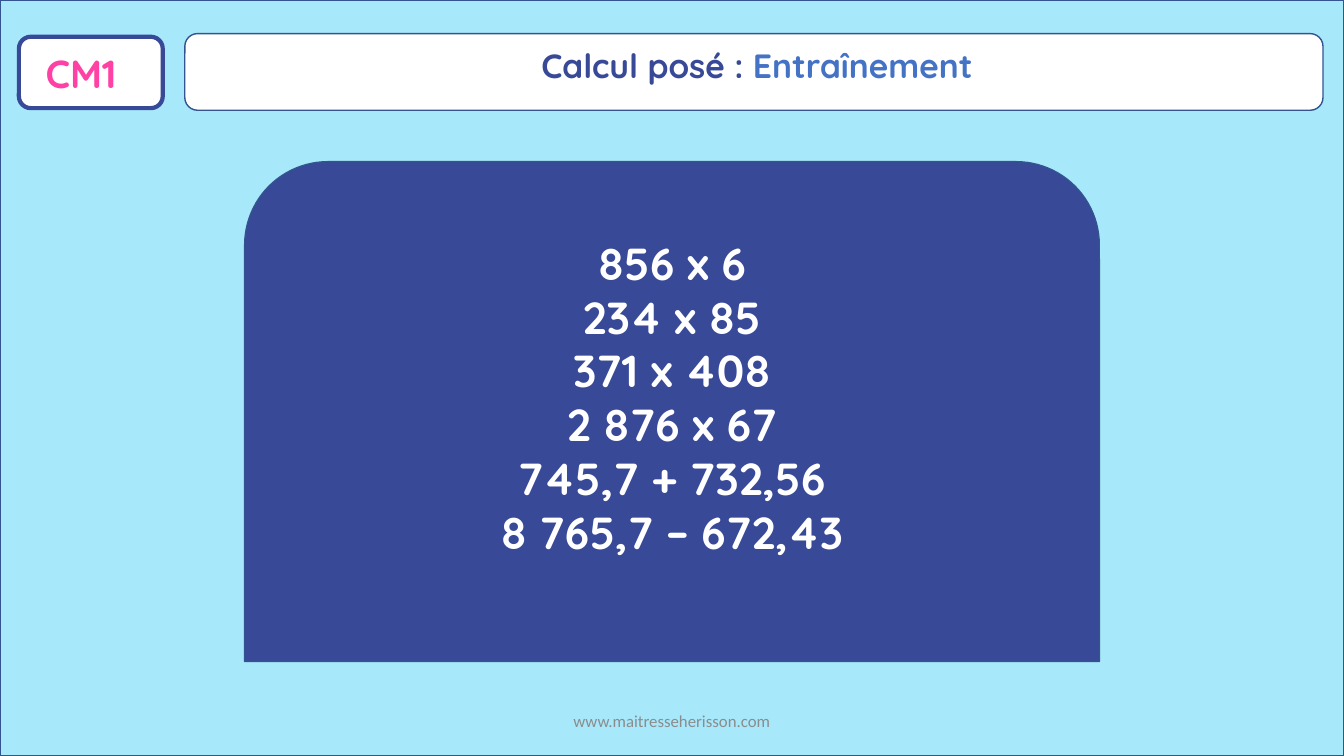
from pptx import Presentation
from pptx.dml.color import RGBColor
from pptx.enum.shapes import MSO_SHAPE
from pptx.enum.text import MSO_ANCHOR, PP_ALIGN
from pptx.util import Pt

PX = 9525  # EMU per px, 96 px to the inch
WIDE, HIGH = 1280, 720

SKY = RGBColor(0xA7, 0xE8, 0xFB)
EDGE = RGBColor(0x32, 0x54, 0x91)
NAVY = RGBColor(0x37, 0x49, 0x97)
BLUE = RGBColor(0x44, 0x72, 0xC4)
PINK = RGBColor(0xFF, 0x41, 0xA5)
GREY = RGBColor(0x8C, 0x8C, 0x8C)
WHITE = RGBColor(0xFF, 0xFF, 0xFF)

SUMS = ["856 x 6", "234 x 85", "371 x 408", "2 876 x 67",
        "745,7 + 732,56", "8 765,7 – 672,43"]


def emu(*box):
    return [n * PX for n in box]


def add_form(slide, kind, box, fill, line=EDGE, width=1):
    form = slide.shapes.add_shape(kind, *emu(*box))
    form.shadow.inherit = False
    form.fill.solid()
    form.fill.fore_color.rgb = fill
    form.line.color.rgb = line
    form.line.width = Pt(width)
    return form


def add_run(para, text, size, color, font="Quicksand", bold=True):
    run = para.add_run()
    run.text = text
    run.font.name = font
    run.font.size = Pt(size)
    run.font.bold = bold
    run.font.color.rgb = color


def add_label(slide, box, runs, align=PP_ALIGN.CENTER, anchor=MSO_ANCHOR.TOP):
    frame = slide.shapes.add_textbox(*emu(*box)).text_frame
    frame.word_wrap = True
    frame.vertical_anchor = anchor
    para = frame.paragraphs[0]
    para.alignment = align
    for run in runs:
        add_run(para, *run)


def add_badge(slide, x, y, w, h):
    add_form(slide, MSO_SHAPE.ROUNDED_RECTANGLE, (x, y, w, h), WHITE, NAVY, 3)
    add_label(slide, (x + 16, y + 7, w - 32, h - 13),
              [("CM1", 28, PINK)], PP_ALIGN.LEFT)


def add_title(slide, x, y, w, h):
    add_form(slide, MSO_SHAPE.ROUNDED_RECTANGLE, (x, y, w, h), WHITE)
    add_label(slide, (x + 7, y + 6, w - 8, h - 25),
              [("Calcul posé : ", 24, NAVY), ("Entraînement", 24, BLUE)])


def add_board(slide, x, y, w, h):
    board = add_form(slide, MSO_SHAPE.ROUND_2_SAME_RECTANGLE, (x, y, w, h), NAVY)
    frame = board.text_frame
    frame.word_wrap = True
    frame.vertical_anchor = MSO_ANCHOR.MIDDLE
    frame.margin_bottom = 56 * PX  # lifts the sums above the centre
    for i, text in enumerate(SUMS):
        para = frame.add_paragraph() if i else frame.paragraphs[0]
        para.alignment = PP_ALIGN.CENTER
        add_run(para, text, 32, WHITE)


def add_foot(slide, x, y, w, h):
    add_label(slide, (x, y, w, h),
              [("www.maitresseherisson.com", 12, GREY, "Calibri", False)],
              anchor=MSO_ANCHOR.MIDDLE)


def main():
    deck = Presentation()
    deck.slide_width, deck.slide_height = emu(WIDE, HIGH)
    slide = deck.slides.add_slide(deck.slide_layouts[6])
    # Backdrop
    add_form(slide, MSO_SHAPE.RECTANGLE, (0, 0, WIDE, HIGH), SKY)
    # Header
    add_badge(slide, 18, 35, 137, 68)
    add_title(slide, 176, 32, 1084, 73)
    # Exercises and footer
    add_board(slide, 233, 154, 814, 476)
    add_foot(slide, 424, 667, 432, 38)
    deck.save("out.pptx")


if __name__ == "__main__":
    main()
